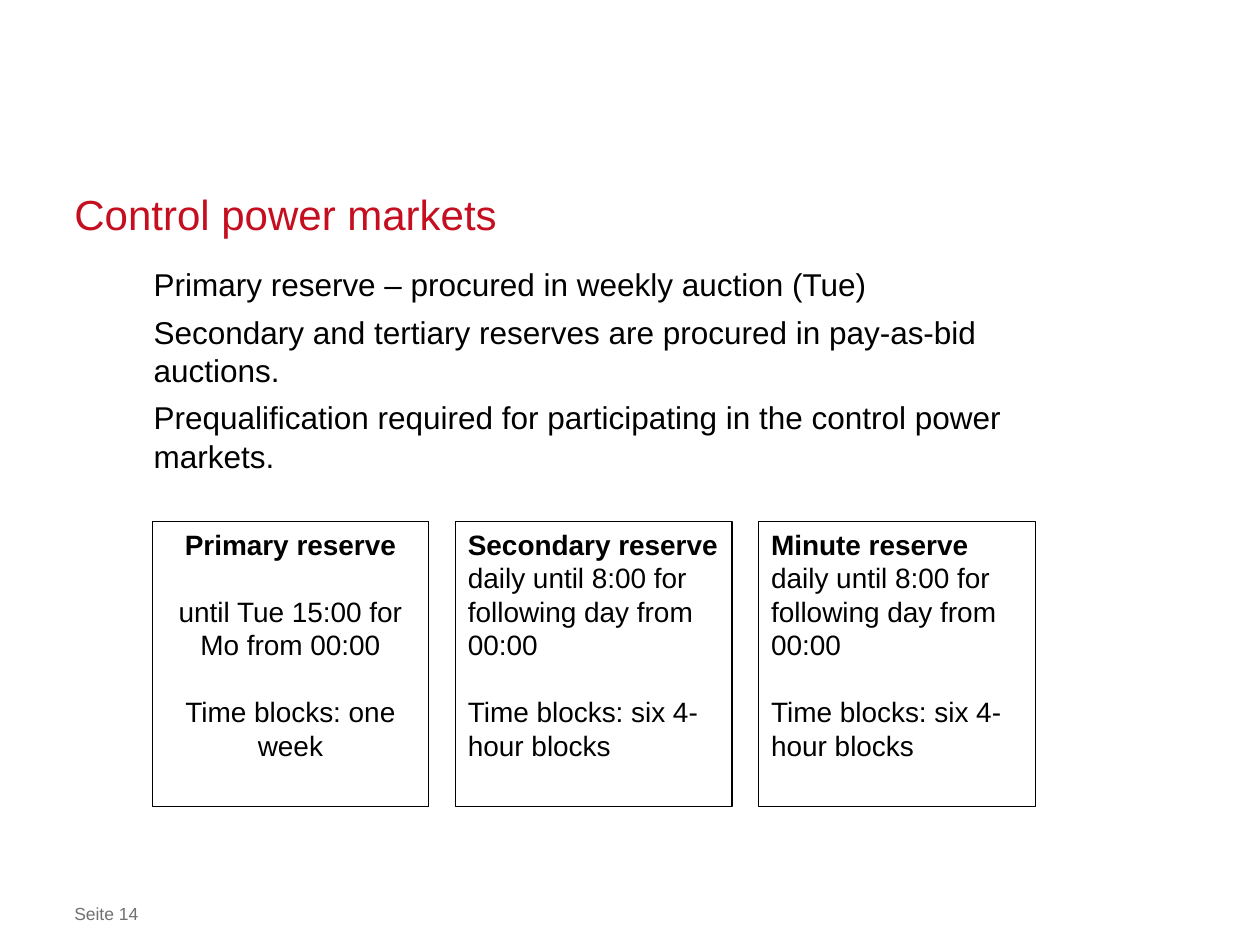
from pptx import Presentation
from pptx.dml.color import RGBColor
from pptx.enum import shapes, text
from pptx.util import Pt

COLORS = {"red": "C50E1F", "black": "000000", "grey": "717171"}
FONT = "Arial"

TITLE = "Control power markets"
FOOTER = "Seite 14"
POINTS = [
    "Primary reserve – procured in weekly auction (Tue)",
    "Secondary and tertiary reserves are procured in pay-as-bid auctions.",
    "Prequalification required for participating in the control power markets.",
]
DAILY = "daily until 8:00 for following day from 00:00"
SIX_BLOCKS = "Time blocks: six 4-hour blocks"
LEFT, CENTER = text.PP_ALIGN.LEFT, text.PP_ALIGN.CENTER
LINE = 19.1
MARKETS = [
    ("Primary reserve", CENTER,
     [("until Tue 15:00 for Mo from 00:00", LINE), ("Time blocks: one week", LINE)]),
    ("Secondary reserve", LEFT, [(DAILY, 0), (SIX_BLOCKS, LINE)]),
    ("Minute reserve", LEFT, [(DAILY, 0), (SIX_BLOCKS, LINE)]),
]
BOX_LEFT, BOX_TOP, BOX_WIDTH, BOX_HEIGHT, BOX_STEP = 87, 298, 158, 162.7, 173.3


def color(name):
    return RGBColor.from_string(COLORS[name])


def add_paragraph(tf, words, size, name="black", first=False, bold=False,
                  line=None, before=0, align=LEFT):
    p = tf.paragraphs[0] if first else tf.add_paragraph()
    p.text = words
    p.alignment = align
    p.space_before = Pt(before)
    if line:
        p.line_spacing = Pt(line)
    p.font.name, p.font.size, p.font.bold = FONT, Pt(size), bold
    p.font.color.rgb = color(name)


def add_text(s, left, top, width, height, anchor=text.MSO_ANCHOR.TOP):
    tf = s.shapes.add_textbox(Pt(left), Pt(top), Pt(width), Pt(height)).text_frame
    tf.word_wrap = True
    tf.vertical_anchor = anchor
    tf.margin_left = tf.margin_right = tf.margin_top = tf.margin_bottom = 0
    return tf


def add_market(s, index, heading, align, details):
    sp = s.shapes.add_shape(shapes.MSO_SHAPE.RECTANGLE,
                            Pt(BOX_LEFT + index * BOX_STEP), Pt(BOX_TOP),
                            Pt(BOX_WIDTH), Pt(BOX_HEIGHT))
    sp.shadow.inherit = False
    sp.fill.background()
    sp.line.color.rgb = color("black")
    sp.line.width = Pt(0.75)
    tf = sp.text_frame
    tf.word_wrap = True
    tf.vertical_anchor = text.MSO_ANCHOR.TOP
    add_paragraph(tf, heading, 16, first=True, bold=True, line=LINE, align=align)
    for words, before in details:
        add_paragraph(tf, words, 16, line=LINE, before=before, align=align)


def main():
    prs = Presentation()
    prs.slide_width, prs.slide_height = Pt(720), Pt(540)
    s = prs.slides.add_slide(prs.slide_layouts[6])

    add_paragraph(add_text(s, 42.5, 516.2, 521, 12.2), FOOTER, 10, "grey", first=True)
    title = add_text(s, 42.5, 108.7, 635, 28, text.MSO_ANCHOR.BOTTOM)
    add_paragraph(title, TITLE, 24, "red", first=True, line=30)

    body = add_text(s, 87.8, 151.2, 533, 320.4)
    for i, point in enumerate(POINTS):
        add_paragraph(body, point, 18, first=i == 0, line=22, before=5 if i else 0)

    for i, market in enumerate(MARKETS):
        add_market(s, i, *market)

    prs.save("out.pptx")


if __name__ == "__main__":
    main()
